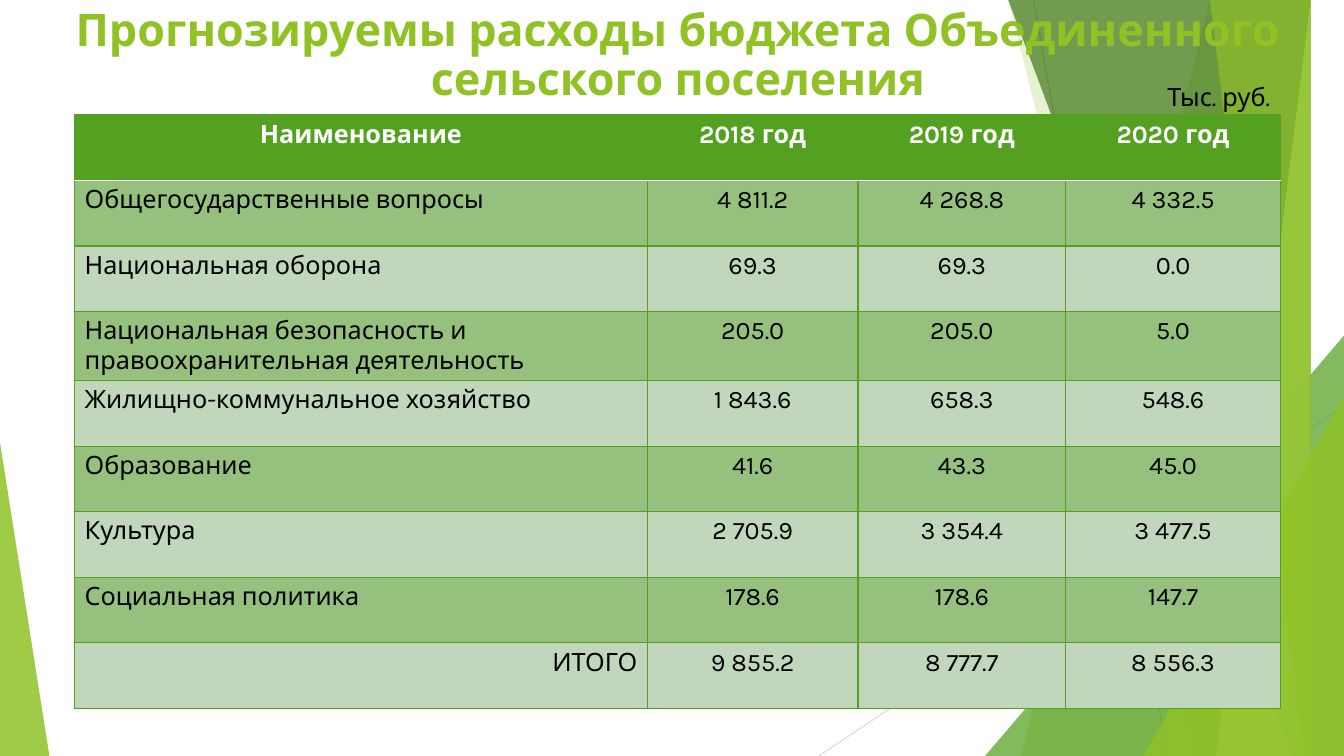
from lxml import etree
from pptx import Presentation
from pptx.dml.color import RGBColor
from pptx.enum import shapes, text
from pptx.oxml import ns
from pptx.util import Inches, Pt

FONT = "Karla"
LIME, GREEN, WHITE, BLACK = "90C226", "54A021", "FFFFFF", "000000"
BANDS = ["95C07D", "C1D6BB"]
ROWS = [
    ["Наименование", "2018 год", "2019 год", "2020 год"],
    ["Общегосударственные вопросы", "4 811.2", "4 268.8", "4 332.5"],
    ["Национальная оборона", "69.3", "69.3", "0.0"],
    ["Национальная безопасность и правоохранительная деятельность", "205.0", "205.0", "5.0"],
    ["Жилищно-коммунальное хозяйство", "1 843.6", "658.3", "548.6"],
    ["Образование", "41.6", "43.3", "45.0"],
    ["Культура", "2 705.9", "3 354.4", "3 477.5"],
    ["Социальная политика", "178.6", "178.6", "147.7"],
    ["ИТОГО", "9 855.2", "8 777.7", "8 556.3"],
]


def paint(color, code):
    color.rgb = RGBColor.from_string(code)


def fill(shape, code, alpha):
    shape.shadow.inherit = False
    shape.line.fill.background()
    shape.fill.solid()
    paint(shape.fill.fore_color, code)
    tint = shape.element.spPr.find(ns.qn("a:solidFill"))[0]
    etree.SubElement(tint, ns.qn("a:alpha"), val=str(alpha * 1000))


def style(para, size, code, bold=False, align=text.PP_ALIGN.LEFT):
    para.alignment = align
    para.font.name = FONT
    para.font.size = Pt(size)
    para.font.bold = bold
    paint(para.font.color, code)


def line(slide, start, end, code):
    rule = slide.shapes.add_connector(
        shapes.MSO_CONNECTOR.STRAIGHT, *map(Inches, start + end))
    rule.line.width = Pt(0.75)
    paint(rule.line.color, code)
    etree.SubElement(rule.element.spPr, ns.qn("a:effectLst"))


def shard(slide, right, base, top, foot, code, alpha):
    pen = slide.shapes.build_freeform(top, -0.01, scale=Inches(1))
    pen.add_line_segments([(right, -0.01), (right, base), (foot, base)], close=True)
    fill(pen.convert_to_shape(), code, alpha)


def wedge(slide, left, base, width, height, peak, code, alpha):
    shape = slide.shapes.add_shape(
        shapes.MSO_SHAPE.ISOSCELES_TRIANGLE,
        *map(Inches, (left, base - height, width, height)))
    shape.adjustments[0] = peak
    fill(shape, code, alpha)


def decor(slide, left, top, width, height):
    right, base = left + width, top + height
    line(slide, (10.25, top), (11.58, base), "BFBFBF")
    line(slide, (right, 4.03), (8.12, base), "D9D9D9")
    shard(slide, right, base, 12.28, 10.04, LIME, 30)
    shard(slide, right, base, 10.5, 11.83, LIME, 20)
    wedge(slide, right - 3.56, base, 3.56, 4.17, 1, GREEN, 72)
    shard(slide, right, base, 10.21, 12.91, "3F7819", 70)
    shard(slide, right, base, 13.03, 11.92, "C0E474", 70)
    shard(slide, right, base, 11.96, 13.18, LIME, 65)
    wedge(slide, right - 1.99, base, 1.99, 3.57, 1, LIME, 80)
    wedge(slide, left, base, 0.49, 3.11, 0, LIME, 85)


def head(slide, *box):
    title = slide.shapes.title
    title.left, title.top, title.width, title.height = map(Inches, box)
    frame = title.text_frame
    frame.text = "Прогнозируемы расходы бюджета Объединенного сельского поселения"
    frame.word_wrap = True
    frame.auto_size = text.MSO_AUTO_SIZE.NONE
    frame.vertical_anchor = text.MSO_ANCHOR.TOP
    para = frame.paragraphs[0]
    para.line_spacing = 0.9
    style(para, 32, LIME, True, text.PP_ALIGN.CENTER)
    title.element.getparent().append(title.element)


def border(cell, side, code, width):
    props = cell._tc.get_or_add_tcPr()
    edge = etree.SubElement(props, ns.qn("a:ln" + side), w=str(Pt(width)))
    solid = etree.SubElement(edge, ns.qn("a:solidFill"))
    etree.SubElement(solid, ns.qn("a:srgbClr"), val=code)


def entry(cell, words, row, col):
    for side in "LRTB":
        seam = (row, side) in [(0, "B"), (1, "T")]
        border(cell, side, WHITE if seam else GREEN, 1.5 if seam else 1)
    cell.fill.solid()
    paint(cell.fill.fore_color, BANDS[(row - 1) % 2] if row else GREEN)
    cell.text = words
    align = text.PP_ALIGN.CENTER
    if col == 0 and row:
        last = row == len(ROWS) - 1
        align = text.PP_ALIGN.RIGHT if last else text.PP_ALIGN.LEFT
    style(cell.text_frame.paragraphs[0], 18, BLACK if row else WHITE, row == 0, align)


def budget(slide, left, top, width, height):
    table = slide.shapes.add_table(
        len(ROWS), 4, *map(Inches, (left, top, width, height))).table
    for col, size in zip(table.columns, [5.68, 2.09, 2.06, 2.13]):
        col.width = Inches(size)
    for r, row in enumerate(ROWS):
        table.rows[r].height = Inches(0.65)
        for c, words in enumerate(row):
            entry(table.cell(r, c), words, r, c)


def unit(slide, *box):
    frame = slide.shapes.add_textbox(*map(Inches, box)).text_frame
    frame.word_wrap = True
    frame.text = "Тыс. руб."
    style(frame.paragraphs[0], 18, BLACK)


def main():
    deck = Presentation()
    deck.slide_width, deck.slide_height = Inches(13.33), Inches(7.5)
    slide = deck.slides.add_slide(deck.slide_layouts[5])
    decor(slide, 0, 0, 13.33, 7.5)
    head(slide, 0.32, 0.03, 12.81, 0.83)
    budget(slide, 0.74, 1.14, 11.96, 5.85)
    unit(slide, 11.48, 0.76, 1.55, 0.4)
    deck.save("out.pptx")


if __name__ == "__main__":
    main()
